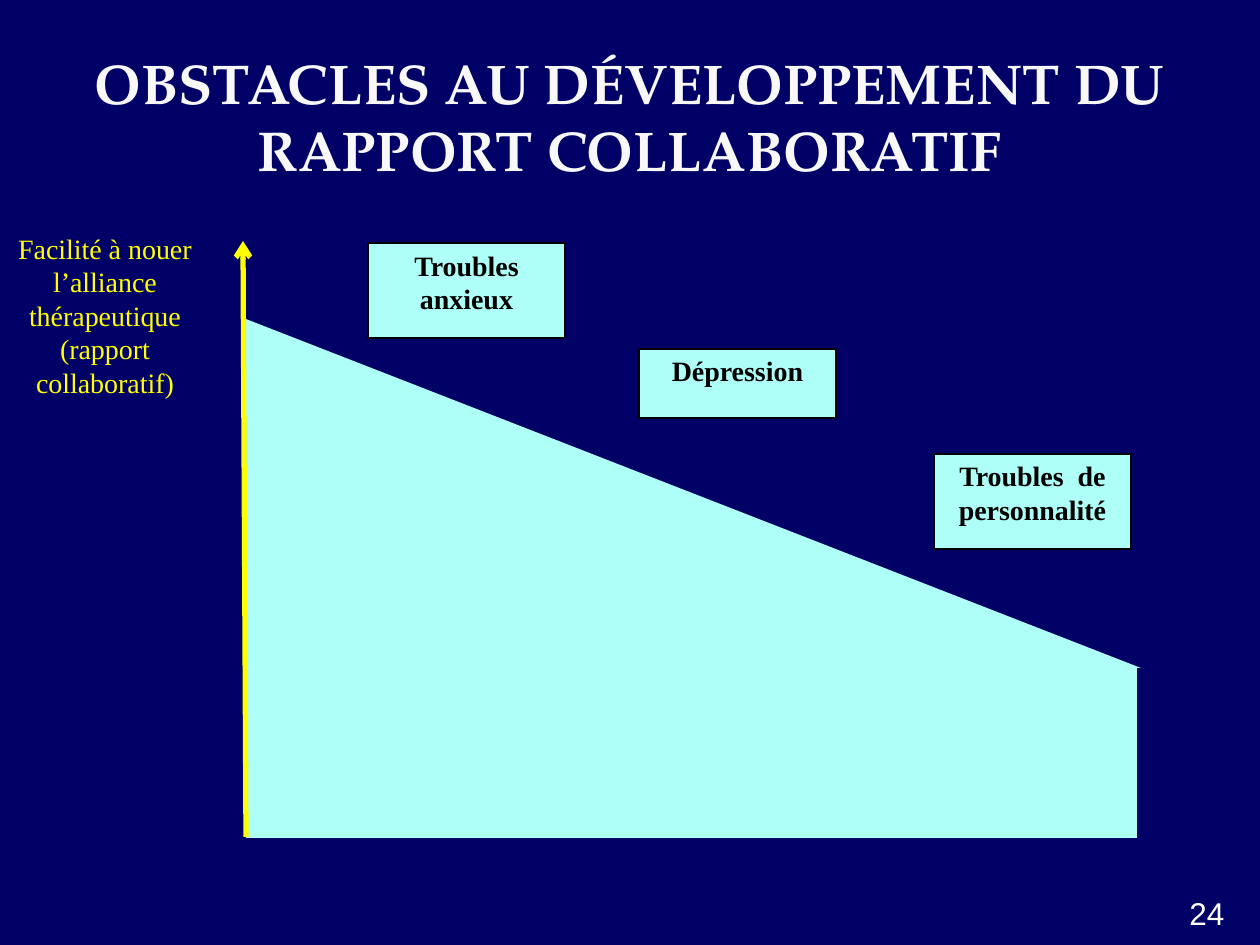
from lxml.etree import SubElement
from pptx import Presentation
from pptx.dml.color import RGBColor
from pptx.enum.shapes import MSO_CONNECTOR, MSO_SHAPE
from pptx.enum.text import MSO_ANCHOR, PP_ALIGN
from pptx.oxml.ns import qn
from pptx.util import Inches, Pt

NAVY = RGBColor(0x00, 0x00, 0x66)
AQUA = RGBColor(0xAE, 0xFF, 0xF7)
YELLOW = RGBColor(0xFF, 0xFF, 0x00)
OFF_WHITE = RGBColor(0xF8, 0xF8, 0xF8)
WHITE = RGBColor(0xFF, 0xFF, 0xFF)
BLACK = RGBColor(0x00, 0x00, 0x00)
SERIF = "Times New Roman"


def px(*values):
    return [round(v * Inches(1) / 126) for v in values]


def write(s, text, font, size, color, bold=False, align=PP_ALIGN.CENTER,
          anchor=MSO_ANCHOR.TOP):
    tf = s.text_frame
    tf.word_wrap = True
    tf.vertical_anchor = anchor
    p = tf.paragraphs[0]
    p.alignment = align
    r = p.add_run()
    r.text = text
    r.font.name = font
    r.font.size = Pt(size)
    r.font.bold = bold
    r.font.color.rgb = color
    return tf


prs = Presentation()
prs.slide_width, prs.slide_height = px(1260, 945)
s = prs.slides.add_slide(prs.slide_layouts[6])
s.background.fill.solid()
s.background.fill.fore_color.rgb = NAVY

title = s.shapes.add_textbox(*px(0, 32, 1260, 157))
write(title, "OBSTACLES AU DÉVELOPPEMENT DU RAPPORT COLLABORATIF",
      "TeX Gyre Pagella", 32, OFF_WHITE, bold=True, anchor=MSO_ANCHOR.BOTTOM)

number = s.shapes.add_textbox(*px(1177, 888, 83, 57))
write(number, "24", "Arial", 18, WHITE, align=PP_ALIGN.LEFT)

axis_label = s.shapes.add_textbox(*px(0, 225, 210, 205))
write(axis_label, "Facilité à nouer l’alliance thérapeutique (rapport collaboratif)",
      SERIF, 16, YELLOW)

for kind, box in [
    (MSO_SHAPE.RECTANGLE, (246, 667, 891, 171)),
    (MSO_SHAPE.RIGHT_TRIANGLE, (246, 319, 895, 349)),
]:
    sp = s.shapes.add_shape(kind, *px(*box))
    sp.shadow.inherit = False
    sp.fill.solid()
    sp.fill.fore_color.rgb = AQUA
    sp.line.fill.background()

for text, left, top, height in [
    ("Troubles anxieux", 368, 243, 95),
    ("Dépression", 639, 349, 69),
    ("Troubles  de personnalité", 934, 454, 95),
]:
    sp = s.shapes.add_shape(MSO_SHAPE.RECTANGLE, *px(left, top, 197, height))
    sp.shadow.inherit = False
    sp.fill.solid()
    sp.fill.fore_color.rgb = AQUA
    sp.line.color.rgb = BLACK
    sp.line.width = Pt(1)
    tf = write(sp, text, SERIF, 16, BLACK, bold=True)
    tf.margin_left, tf.margin_top, tf.margin_right, tf.margin_bottom = px(5, 5, 5, 5)

axis = s.shapes.add_connector(MSO_CONNECTOR.STRAIGHT, *px(246, 837, 243, 241))
axis.line.color.rgb = YELLOW
axis.line.width = Pt(3)
SubElement(axis.line._get_or_add_ln(), qn("a:tailEnd"), type="arrow")
SubElement(axis._element.spPr, qn("a:effectLst"))

prs.save("out.pptx")
